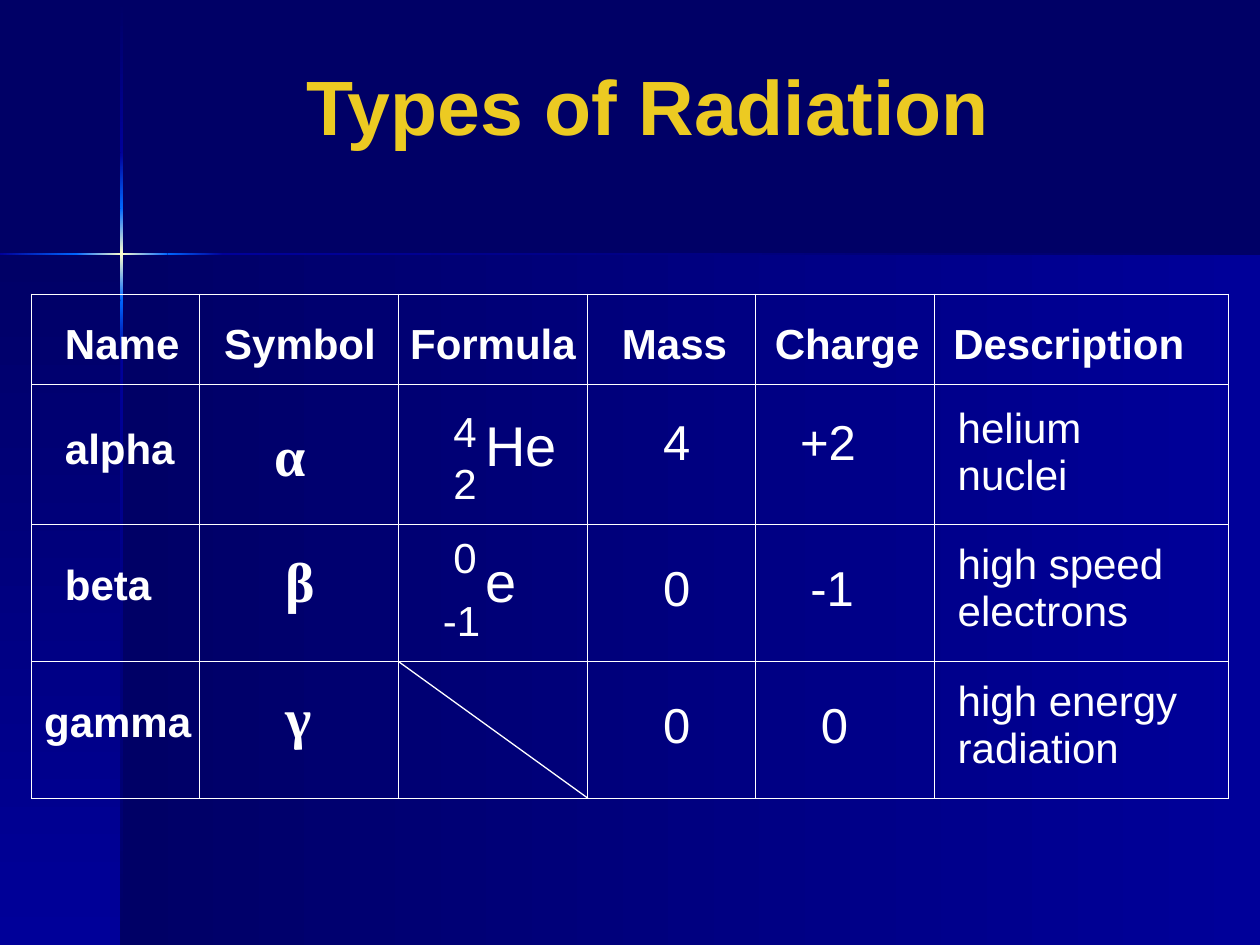
from lxml import etree
from pptx import Presentation
from pptx.dml.color import RGBColor
from pptx.enum.shapes import MSO_CONNECTOR, MSO_SHAPE
from pptx.enum.text import MSO_ANCHOR
from pptx.oxml.ns import qn
from pptx.util import Cm, Pt

RECTANGLE = MSO_SHAPE.RECTANGLE
STRAIGHT = MSO_CONNECTOR.STRAIGHT
TOP = MSO_ANCHOR.TOP

SANS, SERIF = "Arial", "Times New Roman"
WHITE, GOLD = "FFFFFF", "ECCA22"
NIGHT, NAVY, AZURE, GLOW = "000066", "000099", "0066FF", "FFFFCC"
RULE_WIDTH = Pt(0.75)
RIGHTWARD, DOWNWARD = 0, 270

PANELS = [
    ((2.46, 5.13, 22.94, 13.92), [NIGHT, NAVY], RIGHTWARD),
    ((0, 5.13, 2.46, 13.92), [NIGHT, NAVY], DOWNWARD),
]
BEAM = 0.05
# Each beam segment: start, length, gradient colours
VERTICAL_BEAM = [
    (0.03, 3.04, [NIGHT, NAVY]),
    (7.16, 11.89, [NAVY, NIGHT]),
    (6.05, 1.11, [AZURE, NAVY]),
    (3.07, 1.12, [NAVY, AZURE]),
    (4.19, 1.86, [AZURE, GLOW, AZURE]),
]
HORIZONTAL_BEAM = [
    (4.5, 20.9, [NAVY, NIGHT]),
    (0, 1.54, [NAVY, AZURE]),
    (3.38, 1.12, [AZURE, NAVY]),
    (1.53, 1.85, [AZURE, GLOW, AZURE]),
]

COLUMN_EDGES = [0.64, 4.02, 8.04, 11.85, 15.24, 18.84, 24.77]
ROW_EDGES = [5.93, 7.75, 10.58, 13.34, 16.09]
RADIATION = [
    ["Name", "Symbol", "Formula", "Mass", "Charge", "Description"],
    ["alpha", "α", "He", "4", "+2", "helium nuclei"],
    ["beta", "β", "e", "0", "-1", "high speed electrons"],
    ["gamma", "γ", "", "0", "0", "high energy radiation"],
]
LEFT_INSETS = [
    [0.67, 0.5, 0.23, 0.69, 0.38, 0.38],
    [0.67, 1.52, 1.74, 1.52, 0.89, 0.47],
    [0.67, 1.74, 1.74, 1.52, 1.1, 0.47],
    [0.25, 1.74, 1.74, 1.52, 1.31, 0.47],
]
LOWER_TOP_INSETS = [0.76, 0.55, 0.55, 0.76, 0.76, 0.34]
TOP_INSETS = [
    [0.55] * 6,
    [0.85, 0.85, 0.64, 0.64, 0.64, 0.42],
    LOWER_TOP_INSETS,
    LOWER_TOP_INSETS,
]
RIGHT_INSETS = [0, 0, 0, 0, 0, 0.76]
# Font, size and boldness of the body cells, column by column
BODY_STYLES = [
    (SANS, 24, True), (SERIF, 32, True), (SANS, 32, False),
    (SANS, 28, False), (SANS, 28, False), (SANS, 24, False),
]
ISOTOPE_NUMBERS = [
    ("4", 8.89, 8.04), ("2", 8.89, 9.1),
    ("0", 8.89, 10.58), ("-1", 8.68, 11.85),
]


def rgb(colour):
    return RGBColor.from_string(colour)


def style_text(frame, font, size, bold=False, colour=WHITE):
    for paragraph in frame.paragraphs:
        for run in paragraph.runs:
            run.font.name = font
            run.font.size = Pt(size)
            run.font.bold = bold
            run.font.color.rgb = rgb(colour)


def add_gradient_panel(slide, bounds, colours, direction):
    panel = slide.shapes.add_shape(RECTANGLE, *map(Cm, bounds))
    panel.shadow.inherit = False
    panel.line.fill.background()
    panel.fill.gradient()
    panel.fill.gradient_angle = direction
    stops = panel.fill._xPr.find(f"{qn('a:gradFill')}/{qn('a:gsLst')}")
    for stop in list(stops):
        stops.remove(stop)
    for index, colour in enumerate(colours):
        position = 100000 * index // (len(colours) - 1)
        stop = etree.SubElement(stops, qn("a:gs"), pos=str(position))
        etree.SubElement(stop, qn("a:srgbClr"), val=colour)


def add_backdrop(slide):
    slide.background.fill.solid()
    slide.background.fill.fore_color.rgb = rgb(NIGHT)
    for panel in PANELS:
        add_gradient_panel(slide, *panel)
    for start, length, colours in VERTICAL_BEAM:
        add_gradient_panel(slide, (2.43, start, BEAM, length), colours, DOWNWARD)
    for start, length, colours in HORIZONTAL_BEAM:
        add_gradient_panel(slide, (start, 5.1, length, BEAM), colours, RIGHTWARD)


def add_label(slide, text, bounds, size, bold=False, colour=WHITE):
    frame = slide.shapes.add_textbox(*map(Cm, bounds)).text_frame
    frame.word_wrap = True
    frame.text = text
    style_text(frame, SANS, size, bold, colour)
    return frame


def draw_cell_borders(cell):
    properties = cell._tc.get_or_add_tcPr()
    for side in ("lnL", "lnR", "lnT", "lnB"):
        border = etree.SubElement(properties, qn(f"a:{side}"), w=str(RULE_WIDTH))
        fill = etree.SubElement(border, qn("a:solidFill"))
        etree.SubElement(fill, qn("a:srgbClr"), val=WHITE)


def add_radiation_table(slide):
    left, right = COLUMN_EDGES[0], COLUMN_EDGES[-1]
    top, bottom = ROW_EDGES[0], ROW_EDGES[-1]
    table = slide.shapes.add_table(
        len(RADIATION), len(RADIATION[0]),
        Cm(left), Cm(top), Cm(right - left), Cm(bottom - top)).table
    table.first_row = table.horz_banding = False
    for column, start, end in zip(table.columns, COLUMN_EDGES, COLUMN_EDGES[1:]):
        column.width = Cm(end - start)
    for row, start, end in zip(table.rows, ROW_EDGES, ROW_EDGES[1:]):
        row.height = Cm(end - start)

    for r, entries in enumerate(RADIATION):
        for c, entry in enumerate(entries):
            cell = table.cell(r, c)
            draw_cell_borders(cell)
            cell.fill.background()
            cell.vertical_anchor = TOP
            cell.margin_left = Cm(LEFT_INSETS[r][c])
            cell.margin_top = Cm(TOP_INSETS[r][c])
            cell.margin_right = Cm(RIGHT_INSETS[c])
            cell.margin_bottom = 0
            cell.text_frame.text = entry
            style = (SANS, 24, True) if r == 0 else BODY_STYLES[c]
            style_text(cell.text_frame, *style)


def strike_gamma_formula(slide):
    strike = slide.shapes.add_connector(
        STRAIGHT, Cm(COLUMN_EDGES[2]), Cm(ROW_EDGES[3]),
        Cm(COLUMN_EDGES[3]), Cm(ROW_EDGES[4]))
    strike.line.color.rgb = rgb(WHITE)
    strike.line.width = RULE_WIDTH
    etree.SubElement(strike._element.spPr, qn("a:effectLst"))


def main():
    presentation = Presentation()
    presentation.slide_width, presentation.slide_height = Cm(25.4), Cm(19.05)
    slide = presentation.slides.add_slide(presentation.slide_layouts[6])
    add_backdrop(slide)
    title = add_label(slide, "Types of Radiation", (5.93, 1.27, 14.4, 1.93),
                      44, True, GOLD)
    title.paragraphs[0].line_spacing = 0.9
    add_radiation_table(slide)
    for number, left, top in ISOTOPE_NUMBERS:
        add_label(slide, number, (left, top, 1.27, 1.27), 24)
    strike_gamma_formula(slide)
    presentation.save("out.pptx")


if __name__ == "__main__":
    main()
